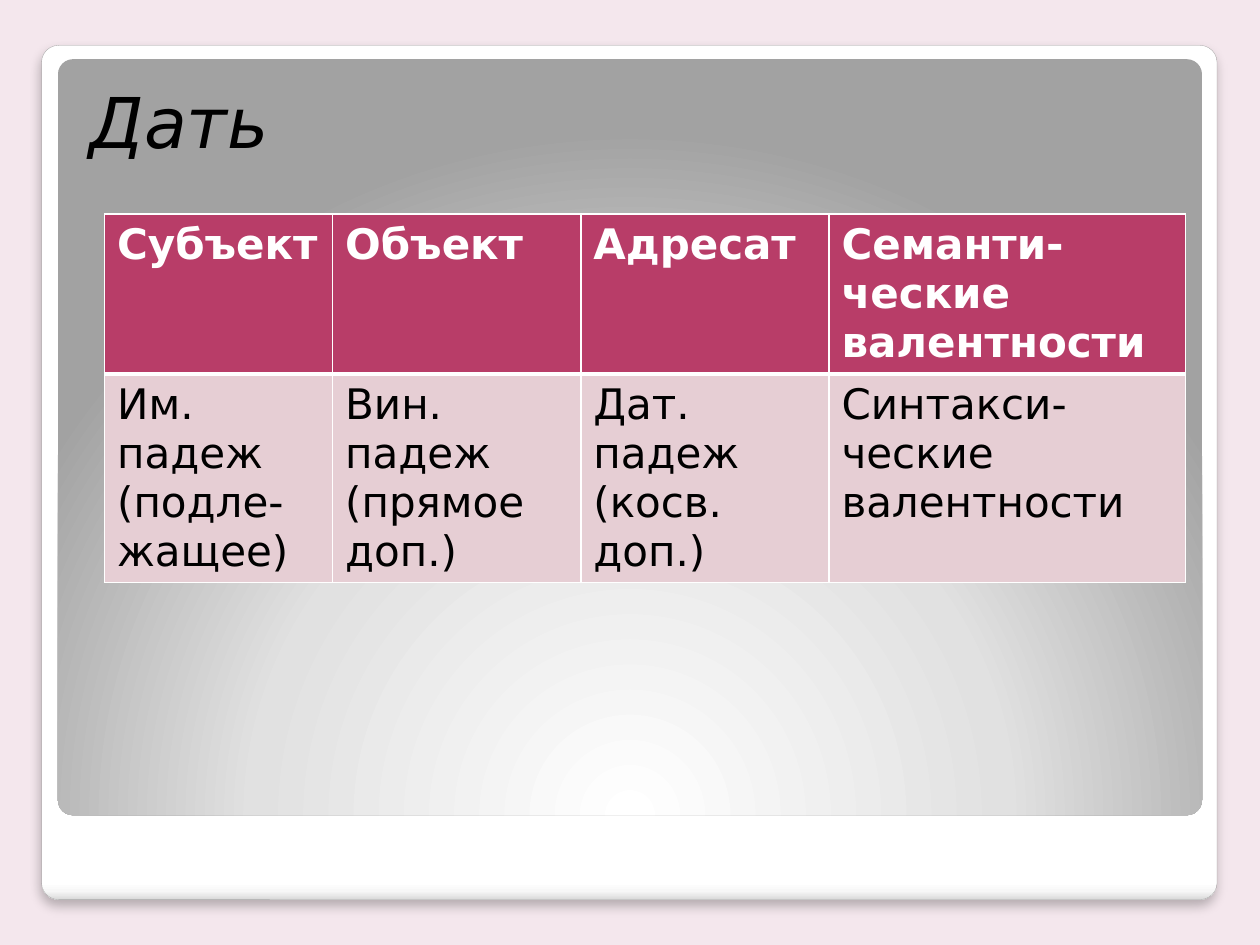
from lxml import etree
from pptx import Presentation
from pptx.dml.color import RGBColor
from pptx.enum.shapes import MSO_SHAPE
from pptx.enum.text import MSO_ANCHOR, MSO_AUTO_SIZE, PP_ALIGN
from pptx.oxml import parse_xml
from pptx.oxml.ns import nsdecls
from pptx.util import Inches, Pt

ROUNDED = MSO_SHAPE.ROUNDED_RECTANGLE
TOP = MSO_ANCHOR.TOP
NO_AUTOFIT = MSO_AUTO_SIZE.NONE
LEFT = PP_ALIGN.LEFT

FONT = "DejaVu Sans"
COLORS = {
    "background": "F4E7ED",
    "frame_line": "A4A4A4",
    "header": "B83D68",
    "body": "E6CED4",
    "white": "FFFFFF",
    "black": "000000",
}

VERB = "Дать"
VALENCES = [
    ["Субъект", "Объект", "Адресат", "Семанти-ческие валентности"],
    ["Им. падеж (подле-жащее)", "Вин. падеж (прямое доп.)",
     "Дат. падеж (косв. доп.)", "Синтакси-ческие валентности"],
]
ROW_STYLES = [
    {"fill": "header", "color": "white", "bold": True, "borders": {"L": 1, "R": 1, "T": 1, "B": 3}},
    {"fill": "body", "color": "black", "bold": False, "borders": {"L": 1, "R": 1, "T": 3, "B": 1}},
]
COLUMN_WIDTHS = [1.81, 1.97, 1.97, 2.83]
ROW_HEIGHTS = [1.27, 1.65]

FRAME = {
    "box": (0.33, 0.36, 9.33, 6.78),
    "stops": [(0, "FFFFFF"), (98, "FFFFFF"), (99, "F7F7F7"), (100, "DADADA")],
    "direction": '<a:lin ang="5400000" scaled="0"/>',
}
PANEL = {
    "box": (0.46, 0.47, 9.08, 6),
    "stops": [(0, "FFFFFF"), (55, "E1E1E1"), (100, "A2A2A2")],
    "direction": '<a:path path="circle"><a:fillToRect l="50000" t="175000" r="50000" b="-75000"/></a:path>',
}


def rgb(name):
    return RGBColor.from_string(COLORS[name])


def set_attributes(target, values):
    for key, value in values.items():
        setattr(target, key, value)


def style_font(font, color, **values):
    set_attributes(font, {"name": FONT, **values})
    font.color.rgb = rgb(color)


def add_rounded(slide, box, stops, direction):
    rounded = slide.shapes.add_shape(ROUNDED, *map(Inches, box))
    rounded.adjustments[0] = 0.02
    rounded.shadow.inherit = False
    rounded.line.fill.background()
    stop_xml = "".join(
        f'<a:gs pos="{position * 1000}"><a:srgbClr val="{color}"/></a:gs>'
        for position, color in stops)
    gradient = parse_xml(
        f'<a:gradFill {nsdecls("a")} rotWithShape="1"><a:gsLst>{stop_xml}</a:gsLst>{direction}</a:gradFill>')
    rounded.element.spPr.prstGeom.addnext(gradient)
    return rounded


def add_shadow(shape):
    effects = shape.element.spPr.find("{*}effectLst")
    effects.append(parse_xml(
        f'<a:outerShdw {nsdecls("a")} blurRad="{Pt(6)}" dist="{Pt(4)}" dir="5400000" algn="t" rotWithShape="0">'
        f'<a:srgbClr val="{COLORS["black"]}"><a:alpha val="25000"/></a:srgbClr></a:outerShdw>'))


def set_borders(cell, borders):
    properties = cell._tc.get_or_add_tcPr()
    for index, (side, width) in enumerate(borders.items()):
        properties.insert(index, parse_xml(
            f'<a:ln{side} {nsdecls("a")} w="{Pt(width)}"><a:solidFill>'
            f'<a:srgbClr val="{COLORS["white"]}"/></a:solidFill></a:ln{side}>'))


def add_verb(slide):
    title = slide.shapes.title
    set_attributes(title, {"left": Inches(0.51), "top": Inches(0.52),
                           "width": Inches(9), "height": Inches(6.61)})
    frame = title.text_frame
    set_attributes(frame, {
        "text": VERB, "vertical_anchor": TOP, "auto_size": NO_AUTOFIT, "word_wrap": True,
        "margin_left": Inches(0.2), "margin_top": Inches(0.1),
        "margin_right": Inches(0.1), "margin_bottom": Inches(0.05)})
    paragraph = frame.paragraphs[0]
    set_attributes(paragraph, {"alignment": LEFT, "space_before": Pt(2.5)})
    style_font(paragraph.runs[0].font, "black", size=Pt(40), italic=True)
    title.element.getparent().append(title.element)


def add_valences(slide):
    table = slide.shapes.add_table(
        len(VALENCES), len(COLUMN_WIDTHS), Inches(0.83), Inches(1.7),
        Inches(sum(COLUMN_WIDTHS)), Inches(sum(ROW_HEIGHTS))).table
    for column, width in zip(table.columns, COLUMN_WIDTHS):
        column.width = Inches(width)
    for row, height, texts, style in zip(table.rows, ROW_HEIGHTS, VALENCES, ROW_STYLES):
        row.height = Inches(height)
        for cell, text in zip(row.cells, texts):
            cell.text = text
            cell.fill.solid()
            cell.fill.fore_color.rgb = rgb(style["fill"])
            set_borders(cell, style["borders"])
            style_font(cell.text_frame.paragraphs[0].runs[0].font,
                       style["color"], size=Pt(24), bold=style["bold"])


def main():
    deck = Presentation()
    set_attributes(deck, {"slide_width": Inches(10), "slide_height": Inches(7.5)})
    slide = deck.slides.add_slide(deck.slide_layouts[5])
    slide.background.fill.solid()
    slide.background.fill.fore_color.rgb = rgb("background")

    frame = add_rounded(slide, **FRAME)
    frame.line.color.rgb = rgb("frame_line")
    frame.line.width = Pt(0.16)
    add_shadow(frame)
    add_rounded(slide, **PANEL)
    add_verb(slide)
    add_valences(slide)
    deck.save("out.pptx")


if __name__ == "__main__":
    main()
